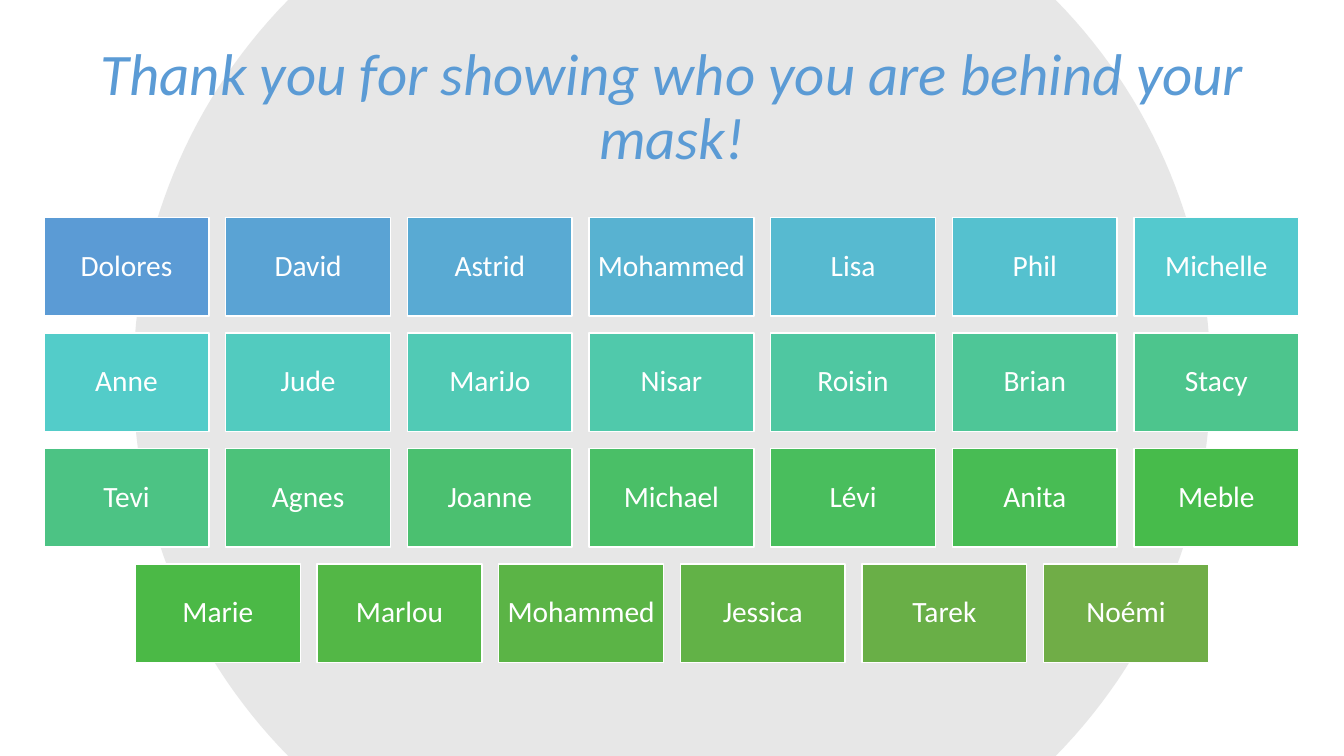
import colorsys
import math
from dataclasses import dataclass

from lxml import etree
from pptx import Presentation
from pptx import util as u
from pptx.dml.color import RGBColor
from pptx.enum import shapes, text
from pptx.oxml.ns import qn

PX = 9525
SLIDE_WIDTH, SLIDE_HEIGHT = 1280, 720
TITLE = "Thank you for showing who you are behind your mask!"
TITLE_AREA = (41, 34, 1198, 139)
CIRCLE_RADIUS = 513
TILE_WIDTH, TILE_HEIGHT = 157, 94
TILE_GAP = 16
TILES_TOP = 207
TILE_INSET = 8
NAME_ROWS = [
    ["Dolores", "David", "Astrid", "Mohammed", "Lisa", "Phil", "Michelle"],
    ["Anne", "Jude", "MariJo", "Nisar", "Roisin", "Brian", "Stacy"],
    ["Tevi", "Agnes", "Joanne", "Michael", "Lévi", "Anita", "Meble"],
    ["Marie", "Marlou", "Mohammed", "Jessica", "Tarek", "Noémi"],
]


@dataclass(frozen=True)
class Theme:
    font: str = "Calibri"
    title_size: int = 42
    name_size: int = 21
    title: str = "5B9BD5"
    circle: str = "D9D9D9"
    circle_opacity: int = 62
    first_tile: str = "5B9BD5"
    last_tile: str = "70AD47"
    white: str = "FFFFFF"


THEME = Theme()


def px(*lengths):
    return [u.Emu(length * PX) for length in lengths]


def apply(target, values):
    for name, value in values.items():
        setattr(target, name, value)


def blend(first, last, share):
    ends = [colorsys.rgb_to_hls(*(part / 255 for part in RGBColor.from_string(color)))
            for color in (first, last)]
    mixed = [start + (end - start) * share for start, end in zip(*ends)]
    return RGBColor(*(round(part * 255) for part in colorsys.hls_to_rgb(*mixed)))


def write(shape, words, size, color, italic=False, inset=None):
    frame = shape.text_frame
    apply(frame, {"word_wrap": True, "auto_size": text.MSO_AUTO_SIZE.NONE,
                  "vertical_anchor": text.MSO_ANCHOR.MIDDLE})
    if inset is not None:
        margin = px(inset)[0]
        apply(frame, {f"margin_{side}": margin for side in ("left", "top", "right", "bottom")})
    para = frame.paragraphs[0]
    apply(para, {"alignment": text.PP_ALIGN.CENTER, "line_spacing": 0.9})
    span = para.add_run()
    span.text = words
    apply(span.font, {"name": THEME.font, "size": u.Pt(size), "italic": italic})
    span.font.color.rgb = RGBColor.from_string(color)


def paint(shape, color):
    shape.shadow.inherit = False
    shape.fill.solid()
    shape.fill.fore_color.rgb = color


def add_title(page):
    title = page.shapes.title
    apply(title, dict(zip(("left", "top", "width", "height"), px(*TITLE_AREA))))
    write(title, TITLE, THEME.title_size, THEME.title, italic=True)
    return title


def add_cropped_circle(page):
    center_x, center_y = SLIDE_WIDTH / 2, SLIDE_HEIGHT / 2
    limit = math.degrees(math.asin(center_y / CIRCLE_RADIUS))
    steps = 60
    sweep = [limit * (2 * step / steps - 1) for step in range(steps + 1)]
    angles = [math.radians(angle) for angle in sweep + [angle + 180 for angle in sweep]]
    points = [(round((center_x + CIRCLE_RADIUS * math.cos(angle)) * PX),
               round((center_y + CIRCLE_RADIUS * math.sin(angle)) * PX)) for angle in angles]
    builder = page.shapes.build_freeform(*points[0], scale=1.0)
    builder.add_line_segments(points[1:], close=True)
    circle = builder.convert_to_shape()
    paint(circle, RGBColor.from_string(THEME.circle))
    circle.line.fill.background()
    color = circle.element.spPr.find(qn("a:solidFill"))[0]
    etree.SubElement(color, qn("a:alpha")).set("val", str(THEME.circle_opacity * 1000))
    return circle


def add_tile(group, left, top, name, color):
    tile = group.shapes.add_shape(shapes.MSO_SHAPE.RECTANGLE,
                                  *px(left, top, TILE_WIDTH, TILE_HEIGHT))
    paint(tile, color)
    tile.line.color.rgb = RGBColor.from_string(THEME.white)
    tile.line.width = u.Pt(1)
    write(tile, name, THEME.name_size, THEME.white, inset=TILE_INSET)


def add_name_tiles(page):
    group = page.shapes.add_group_shape()
    last = sum(len(names) for names in NAME_ROWS) - 1
    index = 0
    for row, names in enumerate(NAME_ROWS):
        row_width = len(names) * (TILE_WIDTH + TILE_GAP) - TILE_GAP
        row_left = (SLIDE_WIDTH - row_width) // 2
        top = TILES_TOP + row * (TILE_HEIGHT + TILE_GAP)
        for column, name in enumerate(names):
            left = row_left + column * (TILE_WIDTH + TILE_GAP)
            color = blend(THEME.first_tile, THEME.last_tile, index / last)
            add_tile(group, left, top, name, color)
            index += 1


def main():
    deck = Presentation()
    deck.slide_width, deck.slide_height = px(SLIDE_WIDTH, SLIDE_HEIGHT)
    page = deck.slides.add_slide(deck.slide_layouts[5])
    title = add_title(page)
    circle = add_cropped_circle(page)
    title.element.addprevious(circle.element)
    add_name_tiles(page)
    deck.save("out.pptx")


if __name__ == "__main__":
    main()
